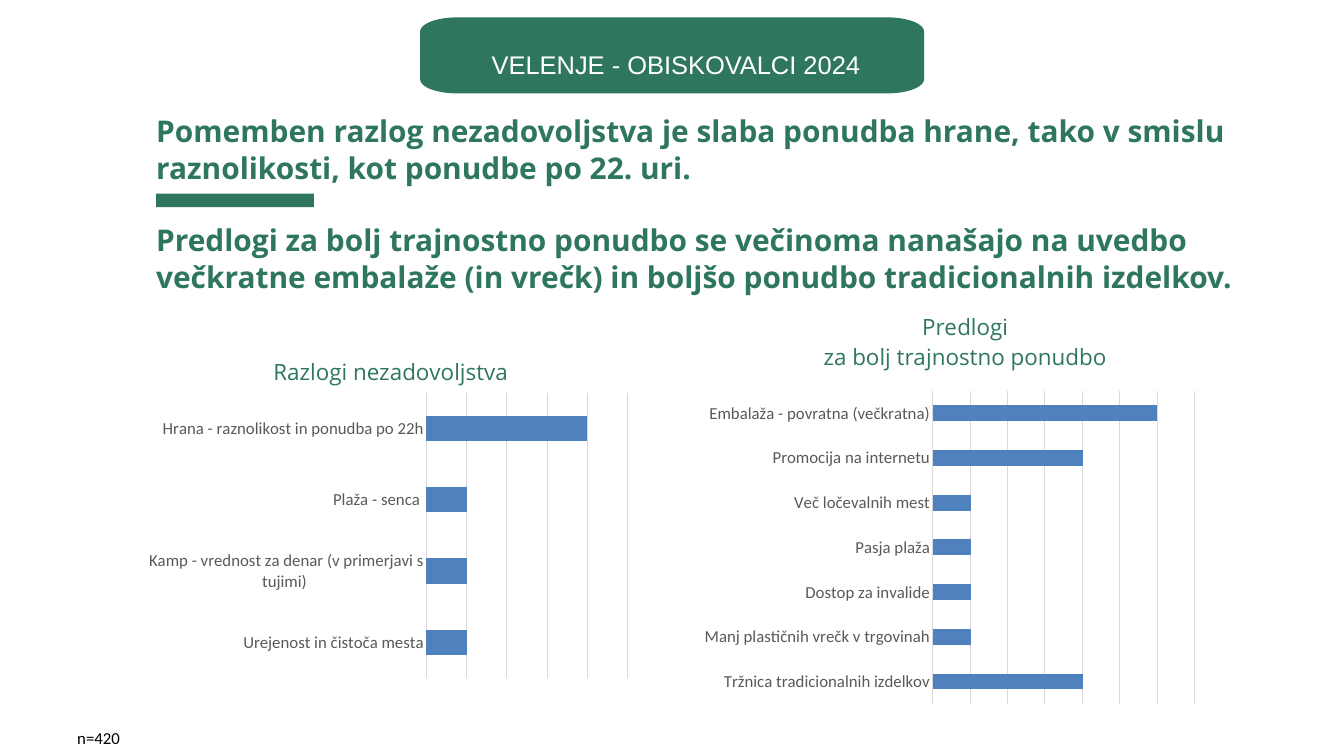
from dataclasses import dataclass
from math import cos, radians, sin

from lxml import etree
from pptx import Presentation
from pptx.chart.data import CategoryChartData
from pptx.dml.color import RGBColor
from pptx.enum.chart import XL_CHART_TYPE, XL_TICK_MARK
from pptx.enum.shapes import MSO_SHAPE
from pptx.enum.text import MSO_ANCHOR, MSO_AUTO_SIZE, PP_ALIGN
from pptx.oxml.ns import qn
from pptx.util import Cm, Pt

BAR_CLUSTERED = XL_CHART_TYPE.BAR_CLUSTERED
NO_TICK = XL_TICK_MARK.NONE
RECTANGLE = MSO_SHAPE.RECTANGLE
TOP = MSO_ANCHOR.TOP
NO_FIT = MSO_AUTO_SIZE.NONE
LEFT, CENTER = PP_ALIGN.LEFT, PP_ALIGN.CENTER


@dataclass(frozen=True)
class Theme:
    green: RGBColor = RGBColor(0x2E, 0x76, 0x5E)
    white: RGBColor = RGBColor(0xFF, 0xFF, 0xFF)
    black: RGBColor = RGBColor(0, 0, 0)
    label: RGBColor = RGBColor(0x59, 0x59, 0x59)
    grid: RGBColor = RGBColor(0xD9, 0xD9, 0xD9)
    bar: RGBColor = RGBColor(0x4F, 0x81, 0xBD)
    heading_font: str = "Open Sans"
    banner_font: str = "Arial"
    body_font: str = "Calibri"
    heading: Pt = Pt(32)
    heading_line: Pt = Pt(39)
    banner: Pt = Pt(27.3)
    chart_title: Pt = Pt(24)
    small: Pt = Pt(18)


THEME = Theme()


def style_font(font, name, size, color, bold=False):
    font.name, font.size, font.bold = name, size, bold
    font.color.rgb = color


def fill_plain(shape, color):
    shape.shadow.inherit = False
    shape.fill.solid()
    shape.fill.fore_color.rgb = color
    shape.line.fill.background()


def set_frame(tf, margin_x=0, margin_y=0):
    tf.word_wrap = True
    tf.auto_size = NO_FIT
    tf.vertical_anchor = TOP
    tf.margin_left = tf.margin_right = Cm(margin_x)
    tf.margin_top = tf.margin_bottom = Cm(margin_y)


def place_heading(sp, top, text):
    """Move a placeholder and format it as a green statement without bullet."""
    sp.left, sp.top, sp.width, sp.height = Cm(5.9), Cm(top), Cm(43.61), Cm(4.11)
    tf = sp.text_frame
    set_frame(tf)
    tf.text = text
    p = tf.paragraphs[0]
    p.alignment = LEFT
    p.line_spacing = THEME.heading_line
    p.space_before = Pt(0)
    pPr = p._p.get_or_add_pPr()
    pPr.set("marL", "0")
    pPr.set("indent", "0")
    etree.SubElement(pPr, qn("a:buNone"))
    style_font(p.runs[0].font, THEME.heading_font, THEME.heading, THEME.green, True)


def add_text(slide, box, text, font, size, color, margins=(0, 0)):
    sp = slide.shapes.add_textbox(*map(Cm, box))
    set_frame(sp.text_frame, *margins)
    p = sp.text_frame.paragraphs[0]
    p.text = text
    style_font(p.runs[0].font, font, size, color)
    return p


def add_banner(slide, left, top, width, height, rx, ry):
    """Draw a box whose corners are quarter ellipses."""
    right, bottom = left + width, top + height
    corners = [(right - rx, bottom - ry), (left + rx, bottom - ry),
               (left + rx, top + ry), (right - rx, top + ry)]
    points = []
    for i, (cx, cy) in enumerate(corners):
        for degree in range(90 * i, 90 * i + 91, 6):
            angle = radians(degree)
            points.append((Cm(cx + rx * cos(angle)), Cm(cy + ry * sin(angle))))
    builder = slide.shapes.build_freeform(*points[0])
    builder.add_line_segments(points[1:], close=True)
    fill_plain(builder.convert_to_shape(), THEME.green)


def set_layout(parent, index, inner=False, **fractions):
    """Give a chart part a manual position, in fractions of the chart."""
    for old in parent.findall(qn("c:layout")):
        parent.remove(old)
    layout = etree.Element(qn("c:layout"))
    manual = etree.SubElement(layout, qn("c:manualLayout"))
    if inner:
        etree.SubElement(manual, qn("c:layoutTarget")).set("val", "inner")
    for axis in "xy":
        etree.SubElement(manual, qn(f"c:{axis}Mode")).set("val", "edge")
    for key, value in fractions.items():
        etree.SubElement(manual, qn(f"c:{key}")).set("val", str(value))
    parent.insert(index, layout)


def add_bar_chart(slide, box, title, title_at, plot, data, steps):
    """Add a bar chart; steps is the number of grid intervals up to 100."""
    chart_data = CategoryChartData(number_format="0")
    chart_data.categories = list(data)
    chart_data.add_series("Series 1", list(data.values()))
    chart = slide.shapes.add_chart(BAR_CLUSTERED, *map(Cm, box), chart_data).chart
    style_font(chart.font, THEME.body_font, THEME.small, THEME.black)
    chart.has_legend = False

    # Title
    chart.has_title = True
    tf = chart.chart_title.text_frame
    tf.text = title
    for p in tf.paragraphs:
        p.alignment = CENTER
        for r in p.runs:
            style_font(r.font, THEME.heading_font, THEME.chart_title, THEME.green)
    set_layout(chart.chart_title._element, 1, x=title_at[0], y=title_at[1])

    # Axes
    cat = chart.category_axis
    cat.reverse_order = True
    cat.major_tick_mark = cat.minor_tick_mark = NO_TICK
    style_font(cat.tick_labels.font, THEME.body_font, THEME.small, THEME.label)
    val = chart.value_axis
    val.visible = False
    val.has_major_gridlines = True
    val.minimum_scale = 0
    val.major_unit = 100 / steps
    val.maximum_scale = val.major_unit * (steps + 1)
    for line in (cat.format.line, val.major_gridlines.format.line):
        line.color.rgb = THEME.grid
        line.width = Pt(0.75)

    # Bars
    bars = chart.plots[0]
    bars.gap_width = 182
    bars.vary_by_categories = False
    fill = bars.series[0].format.fill
    fill.solid()
    fill.fore_color.rgb = THEME.bar
    plot_area = chart._chartSpace.find(".//" + qn("c:plotArea"))
    set_layout(plot_area, 0, inner=True, **dict(zip("xywh", plot)))


def main():
    prs = Presentation()
    prs.slide_width, prs.slide_height = Cm(50.8), Cm(28.575)
    slide = prs.slides.add_slide(prs.slide_layouts[1])

    # Key statements with divider
    title, body = slide.placeholders
    place_heading(title, 4.24, "Pomemben razlog nezadovoljstva je slaba ponudba hrane, "
                  "tako v smislu raznolikosti, kot ponudbe po 22. uri.")
    place_heading(body, 8.36, "Predlogi za bolj trajnostno ponudbo se večinoma nanašajo na uvedbo "
                  "večkratne embalaže (in vrečk) in boljšo ponudbo tradicionalnih izdelkov.")
    divider = slide.shapes.add_shape(RECTANGLE, Cm(5.9), Cm(7.32), Cm(5.97), Cm(0.51))
    fill_plain(divider, THEME.green)

    # Banner
    add_banner(slide, 15.88, 0.66, 19.05, 2.87, rx=1.37, ry=0.54)
    p = add_text(slide, (18.19, 1.4, 14.71, 1.63), "VELENJE - OBISKOVALCI 2024",
                 THEME.banner_font, THEME.banner, THEME.white)
    p.alignment = CENTER
    p.line_spacing = 1.4

    # Sample size
    add_text(slide, (2.54, 27.31, 9.32, 1.14), "n=420",
             THEME.body_font, THEME.small, THEME.black, margins=(0.38, 0.18))

    # Charts
    add_bar_chart(slide, (5.28, 12.55, 18.85, 13.34), "Razlogi nezadovoljstva",
                  (0.26, 0.05), (0.575, 0.173, 0.403, 0.807),
                  {"Hrana - raznolikost in ponudba po 22h": 100,
                   "Plaža - senca ": 25,
                   "Kamp - vrednost za denar (v primerjavi s tujimi) ": 25,
                   "Urejenost in čistoča mesta": 25}, steps=4)
    add_bar_chart(slide, (26.24, 11.51, 19.25, 15.42), "Predlogi\nza bolj trajnostno ponudbo",
                  (0.25, 0.01), (0.468, 0.212, 0.514, 0.767),
                  {"Embalaža - povratna (večkratna)": 100,
                   "Promocija na internetu": 67,
                   "Več ločevalnih mest": 17,
                   "Pasja plaža": 17,
                   "Dostop za invalide": 17,
                   "Manj plastičnih vrečk v trgovinah": 17,
                   "Tržnica tradicionalnih izdelkov": 67}, steps=6)

    prs.save("out.pptx")


if __name__ == "__main__":
    main()
